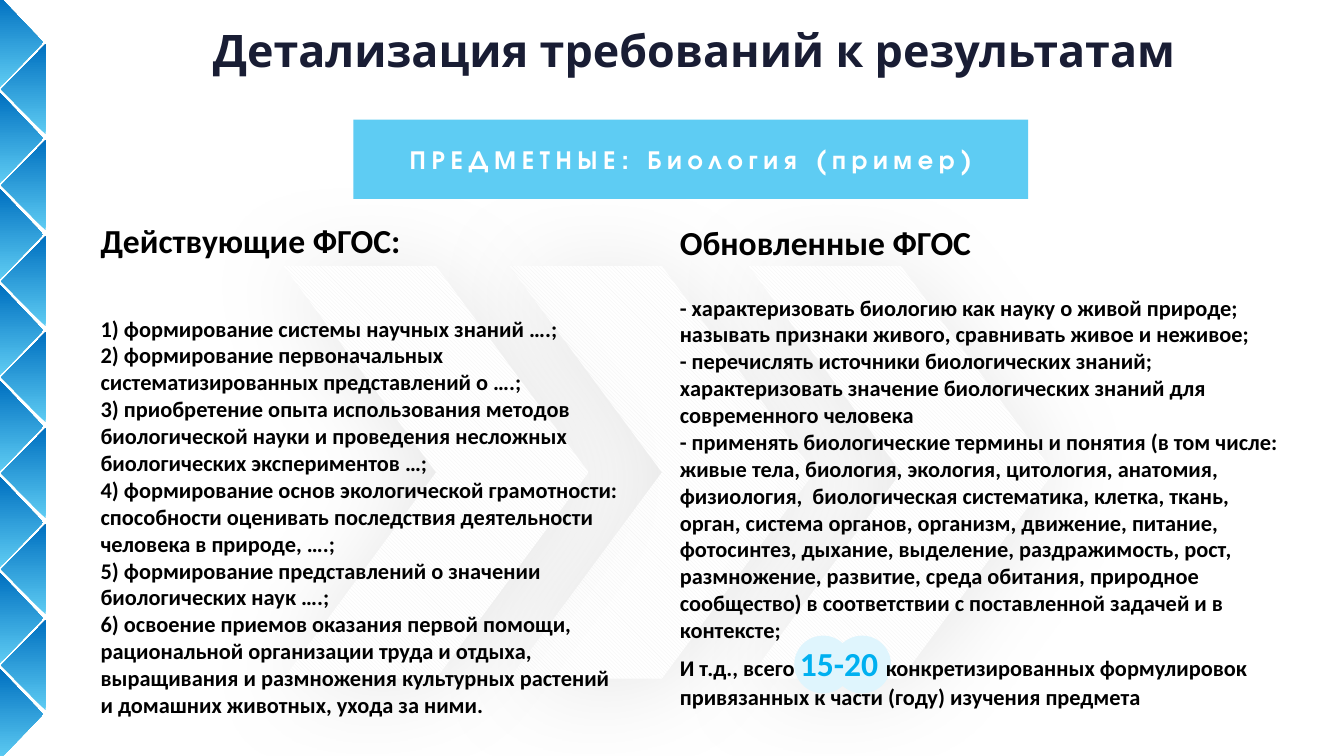
import pptx
import pptx.util
import pptx.dml.color
import pptx.enum.dml
import pptx.enum.shapes
import pptx.enum.text
import pptx.oxml
import pptx.oxml.ns

Inches, Pt = pptx.util.Inches, pptx.util.Pt
RGBColor = pptx.dml.color.RGBColor
SHAPES = pptx.enum.shapes.MSO_SHAPE
ALIGN = pptx.enum.text.PP_ALIGN
AUTO_SIZE = pptx.enum.text.MSO_AUTO_SIZE

SKY = RGBColor(0x5E, 0xCC, 0xF3)
DEEP_BLUE = RGBColor(0x00, 0x70, 0xC0)
ACCENT = RGBColor(0x00, 0xB0, 0xF0)
PALE_BLUE = RGBColor(0xDF, 0xF5, 0xFD)
NAVY = RGBColor(0x19, 0x1D, 0x34)
PALE_GREY = RGBColor(0xF2, 0xF2, 0xF2)
WHITE = RGBColor(0xFF, 0xFF, 0xFF)
BLACK = RGBColor(0x00, 0x00, 0x00)

CURRENT_GOALS = [
    "1) формирование системы научных знаний ….;",
    "2) формирование первоначальных систематизированных представлений о ….;",
    "3) приобретение опыта использования методов биологической науки и проведения "
    "несложных биологических экспериментов …;",
    "4) формирование основ экологической грамотности: способности оценивать "
    "последствия деятельности человека в природе, ….;",
    "5) формирование представлений о значении биологических наук ….;",
    "6) освоение приемов оказания первой помощи, рациональной организации труда и "
    "отдыха, выращивания и размножения культурных растений и домашних животных, "
    "ухода за ними.",
]
UPDATED_GOALS = [
    "- характеризовать биологию как науку о живой природе; называть признаки живого, "
    "сравнивать живое и неживое;",
    "- перечислять источники биологических знаний; характеризовать значение "
    "биологических знаний для современного человека",
    "- применять биологические термины и понятия (в том числе: живые тела, биология, "
    "экология, цитология, анатомия, физиология,  биологическая систематика, клетка, "
    "ткань, орган, система органов, организм, движение, питание, фотосинтез, дыхание, "
    "выделение, раздражимость, рост, размножение, развитие, среда обитания, природное "
    "сообщество) в соответствии с поставленной задачей и в контексте;",
]


def add_run(paragraph, text, size, color=BLACK, font="Calibri"):
    run = paragraph.add_run()
    run.text = text
    run.font.size = Pt(size)
    run.font.name = font
    run.font.bold = True
    run.font.color.rgb = color
    return run


def set_narrow_margins(frame):
    frame.margin_left = frame.margin_right = Inches(0.07)
    frame.margin_top = frame.margin_bottom = Inches(0.04)


def add_plain_shape(slide, kind, left, top, width, height):
    shape = slide.shapes.add_shape(
        kind, Inches(left), Inches(top), Inches(width), Inches(height))
    shape.shadow.inherit = False
    shape.line.fill.background()
    return shape


def add_triangle(slide, points):
    builder = slide.shapes.build_freeform(
        Inches(points[0][0]), Inches(points[0][1]))
    builder.add_line_segments(
        [(Inches(x), Inches(y)) for x, y in points[1:]], close=True)
    triangle = builder.convert_to_shape()
    triangle.shadow.inherit = False
    triangle.line.fill.background()
    triangle.fill.gradient()
    triangle.fill.gradient_angle = 90
    for stop, color, position in zip(
            triangle.fill.gradient_stops, (SKY, DEEP_BLUE), (0, 1)):
        stop.color.rgb = color
        stop.position = position


def add_edge_ornament(slide, left, top, width):
    """Interlocking triangles that point right and left in turn."""
    side, pitch = 0.67, 5 / 7
    right = left + width
    for index in range(8):
        y = top + index * pitch
        add_triangle(slide, [(right - 0.02, y + side / 2), (left, y), (left, y + side)])
    for index in range(7):
        y = top + 0.35 + index * pitch
        add_triangle(slide, [(right, y), (left + 0.01, y + side / 2), (right, y + side)])


def add_title(slide, left, top, width, height):
    title = slide.shapes.add_textbox(
        Inches(left), Inches(top), Inches(width), Inches(height))
    frame = title.text_frame
    frame.word_wrap = True
    set_narrow_margins(frame)
    frame.paragraphs[0].alignment = ALIGN.CENTER
    add_run(frame.paragraphs[0], "Детализация требований к результатам",
            24, NAVY, "Karla")


def add_soft_shadow(shape):
    effects = shape._element.spPr.find(pptx.oxml.ns.qn("a:effectLst"))
    effects.append(pptx.oxml.parse_xml(
        f'<a:outerShdw {pptx.oxml.ns.nsdecls("a")} blurRad="{Pt(56)}" '
        f'dist="{Pt(4)}" dir="5400000" algn="t" rotWithShape="0">'
        '<a:srgbClr val="000000"><a:alpha val="10000"/></a:srgbClr></a:outerShdw>'))


def add_chevrons(slide, left, top, width, height):
    chevron_width = 2.27
    for offset in (1.68, width - chevron_width, 0):
        chevron = add_plain_shape(
            slide, SHAPES.CHEVRON, left + offset, top, chevron_width, height)
        chevron.fill.patterned()
        chevron.fill.pattern = pptx.enum.dml.MSO_PATTERN.LIGHT_DOWNWARD_DIAGONAL
        chevron.fill.fore_color.rgb = PALE_GREY
        chevron.fill.back_color.rgb = WHITE
        add_soft_shadow(chevron)


def add_subject_banner(slide, left, top, width, height):
    banner = add_plain_shape(slide, SHAPES.RECTANGLE, left, top, width, height)
    banner.fill.solid()
    banner.fill.fore_color.rgb = SKY
    frame = banner.text_frame
    frame.word_wrap = True
    frame.vertical_anchor = pptx.enum.text.MSO_ANCHOR.MIDDLE
    set_narrow_margins(frame)
    frame.paragraphs[0].alignment = ALIGN.CENTER
    subject = add_run(frame.paragraphs[0], "ПРЕДМЕТНЫЕ: Биология (пример)",
                      14, WHITE, "TeX Gyre Adventor")
    subject.font._element.set("spc", "300")


def add_goals_column(slide, left, top, width, height, heading, heading_gap, goals):
    column = slide.shapes.add_textbox(
        Inches(left), Inches(top), Inches(width), Inches(height))
    frame = column.text_frame
    frame.word_wrap = True
    frame.auto_size = AUTO_SIZE.SHAPE_TO_FIT_TEXT
    frame.paragraphs[0].space_after = Pt(heading_gap)
    add_run(frame.paragraphs[0], heading, 18)
    for goal in goals:
        add_run(frame.add_paragraph(), goal, 12)
    return frame


def add_count_highlight(slide, left, top, width, height):
    for x in (left, left + width - height):
        circle = add_plain_shape(slide, SHAPES.OVAL, x, top, height, height)
        circle.fill.solid()
        circle.fill.fore_color.rgb = PALE_BLUE


def add_updated_column(slide, left, top, width, height):
    add_count_highlight(slide, left + 0.95, top + 3.13, 0.72, 0.43)
    frame = add_goals_column(slide, left, top, width, height,
                             "Обновленные ФГОС", 17, UPDATED_GOALS)
    total = frame.add_paragraph()
    add_run(total, "И т.д., всего ", 12)
    add_run(total, "15-20 ", 18, ACCENT)
    add_run(total, "конкретизированных формулировок привязанных к части (году) "
                   "изучения предмета", 12)


def main():
    deck = pptx.Presentation()
    deck.slide_width = Inches(10)
    deck.slide_height = deck.slide_width * 9 // 16
    slide = deck.slides.add_slide(deck.slide_layouts[6])
    add_edge_ornament(slide, 0, -0.02, 0.34)
    add_title(slide, 1.33, 0.13, 7.67, 0.89)
    add_chevrons(slide, 2.11, 1.98, 5.73, 3.07)
    add_subject_banner(slide, 2.63, 0.89, 5.02, 0.59)
    add_goals_column(slide, 0.65, 1.59, 4.11, 3.84,
                     "Действующие ФГОС:", 29, CURRENT_GOALS)
    add_updated_column(slide, 4.96, 1.6, 4.72, 3.97)
    deck.save("out.pptx")


if __name__ == "__main__":
    main()
